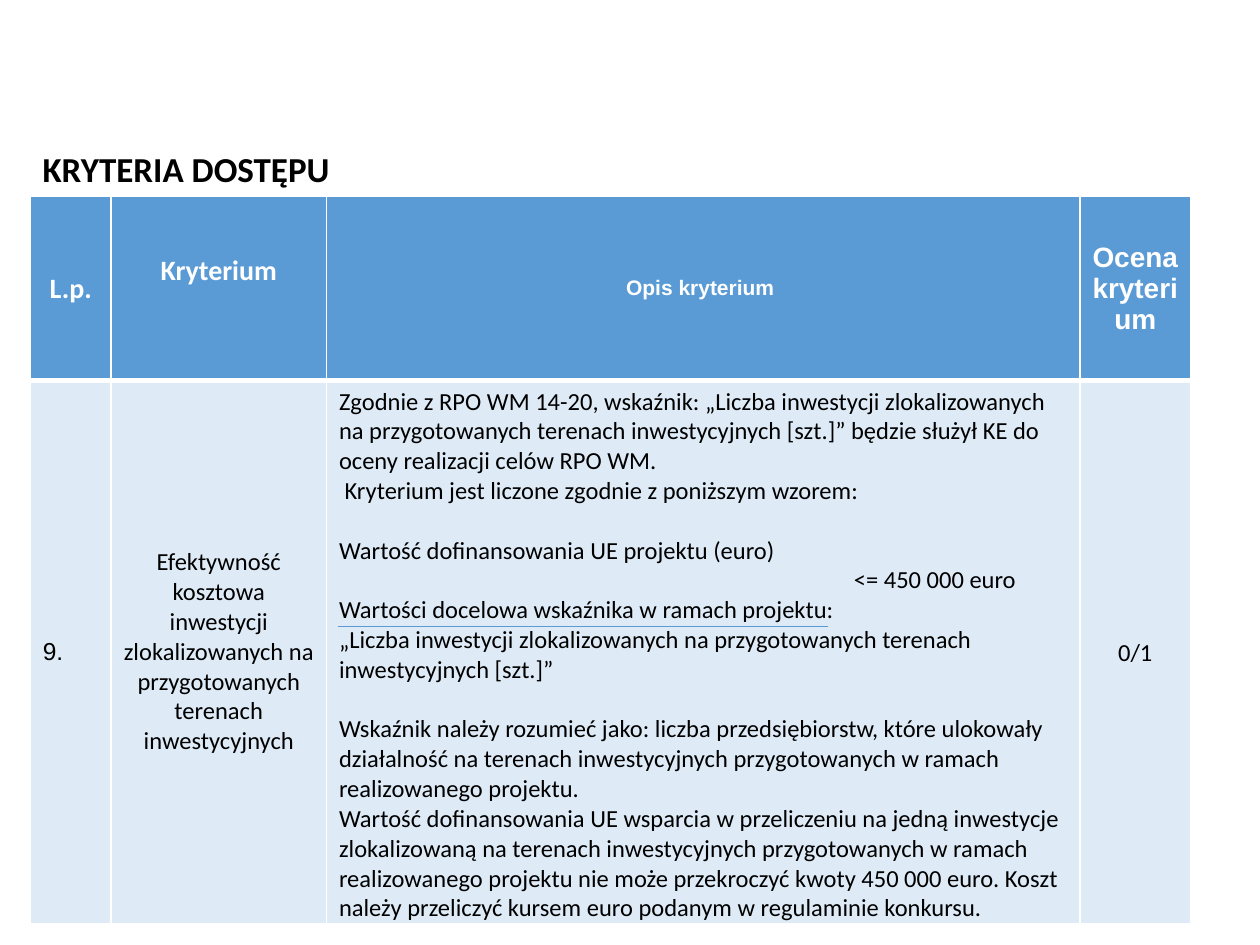
from lxml.etree import SubElement
from pptx import Presentation
from pptx.dml.color import RGBColor
from pptx.enum.shapes import MSO_CONNECTOR
from pptx.enum.text import MSO_ANCHOR, PP_ALIGN
from pptx.oxml import parse_xml
from pptx.oxml.ns import nsdecls, qn
from pptx.util import Cm, Pt

BLUE, PALE, WHITE, BLACK = "5B9BD5", "DEEBF7", "FFFFFF", "000000"
HEADER = {"bold": True, "size": Pt(16), "name": "Calibri"}
BODY = {"bold": False, "size": Pt(14), "name": "Calibri"}
CENTER = {"alignment": PP_ALIGN.CENTER}
GAP = {"space_before": Pt(17)}
MARGIN = Cm(0.1)

COLUMN_WIDTHS = [1.63, 4.34, 15.19, 2.23]
ROW_HEIGHTS = [3.71, 10.74]
HEADERS = [
    ("L.p.", {}, {}),
    ("Kryterium", {}, {"margin_bottom": Cm(0.84)}),
    ("Opis kryterium ", {"size": Pt(12), "name": "Arial"}, {}),
    ("Ocena kryterium", {"name": "Arial"}, {}),
]
DESCRIPTION = [
    ("Zgodnie z RPO WM 14-20, wskaźnik: „Liczba inwestycji zlokalizowanych na "
     "przygotowanych terenach inwestycyjnych [szt.]” będzie służył KE do oceny "
     "realizacji celów RPO WM.", {}),
    (" Kryterium jest liczone zgodnie z poniższym wzorem:", {}),
    ("Wartość dofinansowania UE projektu (euro)", GAP),
    ("<= 450 000 euro", {"indent": Cm(10.38)}),
    ("Wartości docelowa wskaźnika w ramach projektu:", {}),
    ("„Liczba inwestycji zlokalizowanych na przygotowanych terenach "
     "inwestycyjnych [szt.]”", {}),
    ("Wskaźnik należy rozumieć jako: liczba przedsiębiorstw, które ulokowały "
     "działalność na terenach inwestycyjnych przygotowanych w ramach "
     "realizowanego projektu.", GAP),
    ("Wartość dofinansowania UE wsparcia w przeliczeniu na jedną inwestycje "
     "zlokalizowaną na terenach inwestycyjnych przygotowanych w ramach "
     "realizowanego projektu nie może przekroczyć kwoty 450 000 euro. Koszt "
     "należy przeliczyć kursem euro podanym w regulaminie konkursu.", {}),
]
CRITERION = ("Efektywność kosztowa inwestycji zlokalizowanych na przygotowanych "
             "terenach inwestycyjnych")


def rgb(value):
    return RGBColor.from_string(value)


def apply(obj, values):
    for name, value in values.items():
        setattr(obj, name, value)


def write(tf, paragraphs, font, color):
    for i, (text, layout) in enumerate(paragraphs):
        p = tf.paragraphs[0] if i == 0 else tf.add_paragraph()
        layout = dict(layout)
        indent = layout.pop("indent", None)
        if indent is not None:
            p._p.get_or_add_pPr().set("marL", str(int(indent)))
        apply(p, layout)
        r = p.add_run()
        r.text = text
        apply(r.font, font)
        r.font.color.rgb = rgb(color)


def set_borders(cell, bottom):
    tcPr = cell._tc.get_or_add_tcPr()
    widths = {"lnL": 1, "lnR": 1, "lnT": 1, "lnB": bottom}
    for i, (tag, width) in enumerate(widths.items()):
        tcPr.insert(i, parse_xml(
            f'<a:{tag} {nsdecls("a")} w="{Pt(width)}"><a:solidFill>'
            f'<a:srgbClr val="{WHITE}"/></a:solidFill></a:{tag}>'))


def fill_cell(cell, paragraphs, font, color, fill, bottom=1, margins=None):
    cell.vertical_anchor = MSO_ANCHOR.MIDDLE
    apply(cell, margins or {})
    cell.fill.solid()
    cell.fill.fore_color.rgb = rgb(fill)
    set_borders(cell, bottom)
    write(cell.text_frame, paragraphs, font, color)


def add_title(s):
    sp = s.shapes.add_textbox(Cm(0.61), Cm(2.84), Cm(9.4), Cm(1.12))
    tf = sp.text_frame
    apply(tf, {"word_wrap": True, "vertical_anchor": MSO_ANCHOR.MIDDLE})
    font = {"bold": True, "size": Pt(20), "name": "Calibri"}
    write(tf, [("KRYTERIA DOSTĘPU", {})], font, BLACK)


def add_criteria_table(s):
    table = s.shapes.add_table(2, 4, Cm(0.61), Cm(3.96), Cm(sum(COLUMN_WIDTHS)),
                               Cm(sum(ROW_HEIGHTS))).table
    for column, width in zip(table.columns, COLUMN_WIDTHS):
        column.width = Cm(width)
    for row, height in zip(table.rows, ROW_HEIGHTS):
        row.height = Cm(height)
    for i, (text, font, margins) in enumerate(HEADERS):
        fill_cell(table.cell(0, i), [(text, CENTER)], {**HEADER, **font},
                  WHITE, BLUE, bottom=3, margins=margins)
    narrow = {f"margin_{side}": MARGIN for side in ("left", "right", "top", "bottom")}
    body = [
        ([("9.", {})], {"name": "Arial"}, {}),
        ([(CRITERION, CENTER)], {}, {}),
        (DESCRIPTION, {}, {}),
        ([("0/1", {**CENTER, "line_spacing": 1.07})], {}, narrow),
    ]
    for i, (paragraphs, font, margins) in enumerate(body):
        fill_cell(table.cell(1, i), paragraphs, {**BODY, **font},
                  BLACK, PALE, margins=margins)


def add_fraction_line(s):
    line = s.shapes.add_connector(MSO_CONNECTOR.STRAIGHT, Cm(6.81), Cm(12.62),
                                  Cm(16.69), Cm(12.62))
    line.line.color.rgb = rgb(BLUE)
    line.line.width = Pt(0.5)
    SubElement(line._element.spPr, qn("a:effectLst"))


def main():
    prs = Presentation()
    apply(prs, {"slide_width": Cm(25.4), "slide_height": Cm(19.05)})
    s = prs.slides.add_slide(prs.slide_layouts[6])
    add_title(s)
    add_criteria_table(s)
    add_fraction_line(s)
    prs.save("out.pptx")


if __name__ == "__main__":
    main()
